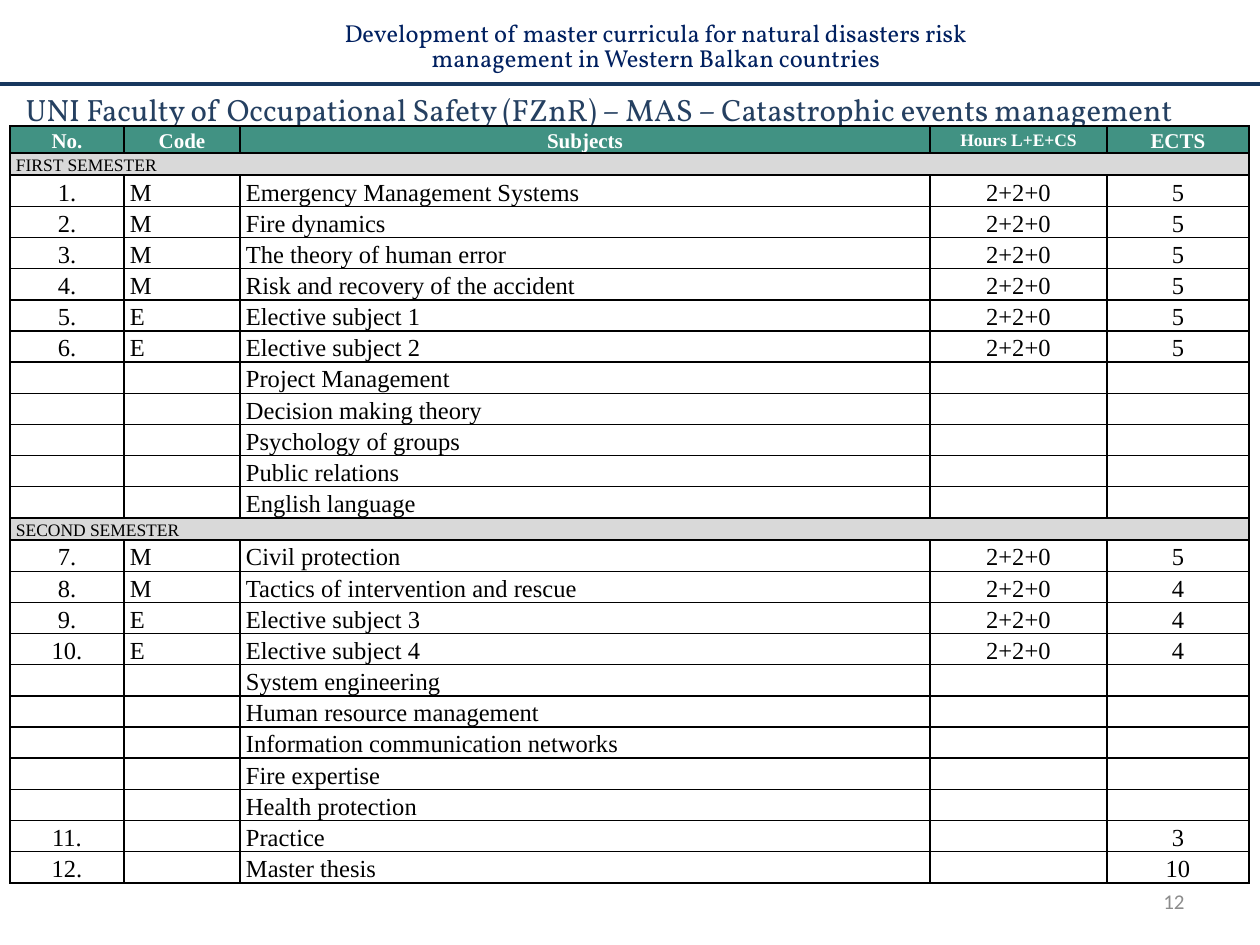
from dataclasses import dataclass

from lxml import etree
from pptx import Presentation
from pptx import util as u
from pptx.dml.color import RGBColor
from pptx.enum import shapes, text
from pptx.oxml import ns

SCALE = 914400 / 126
CENTER = text.PP_ALIGN.CENTER
LEFT = text.PP_ALIGN.LEFT
RIGHT = text.PP_ALIGN.RIGHT
MIDDLE = text.MSO_ANCHOR.MIDDLE
TOP = text.MSO_ANCHOR.TOP


@dataclass(frozen=True)
class Theme:
    heading_font: str = "Vollkorn"
    table_font: str = "Times New Roman"
    number_font: str = "Calibri"
    project: str = "002060"
    rule: str = "17375E"
    programme: str = "254061"
    header: str = "419283"
    semester: str = "D9D9D9"
    ink: str = "000000"
    paper: str = "FFFFFF"
    number: str = "8C8C8C"
    programme_size: float = 17.6
    body_size: int = 14
    header_size: int = 12
    small_size: int = 10


THEME = Theme()
COLUMNS = (114, 116, 690, 177, 142)
ALIGNMENTS = (CENTER, LEFT, LEFT, CENTER, CENTER)
SPACES_AFTER = (0, 0, 0, 3, 3)
HEADINGS = ("No.", "Code", "Subjects", "Hours L+E+CS", "ECTS")
HOURS = "2+2+0"


def electives(*names):
    return [("", "", name, "", "") for name in names]


SEMESTERS = {
    "FIRST SEMESTER": [
        ("1.", "M", "Emergency Management Systems", HOURS, "5"),
        ("2.", "M", "Fire dynamics", HOURS, "5"),
        ("3.", "M", "The theory of human error", HOURS, "5"),
        ("4.", "M", "Risk and recovery of the accident", HOURS, "5"),
        ("5.", "E", "Elective subject 1", HOURS, "5"),
        ("6.", "E", "Elective subject 2", HOURS, "5"),
        *electives("Project Management", "Decision making theory",
                   "Psychology of groups", "Public relations", "English language"),
    ],
    "SECOND SEMESTER": [
        ("7.", "M", "Civil protection", HOURS, "5"),
        ("8.", "M", "Tactics of intervention and rescue", HOURS, "4"),
        ("9.", "E", "Elective subject 3", HOURS, "4"),
        ("10.", "E", "Elective subject 4", HOURS, "4"),
        *electives("System engineering", "Human resource management",
                   "Information communication networks", "Fire expertise",
                   "Health protection"),
        ("11.", "", "Practice", "", "3"),
        ("12.", "", "Master thesis", "", "10"),
    ],
}


def px(length):
    return u.Emu(round(length * SCALE))


def place(shape, box):
    shape.left, shape.top, shape.width, shape.height = map(px, box)


def write(frame, content, *, font, size, color, align=LEFT, bold=False,
          line_spacing=1.0, space_after=0):
    paragraph = frame.paragraphs[0]
    paragraph.alignment = align
    paragraph.line_spacing = line_spacing
    paragraph.space_before = u.Pt(0)
    paragraph.space_after = u.Pt(space_after)
    if not content:
        end = etree.SubElement(paragraph._p, ns.qn("a:endParaRPr"))
        end.set("sz", str(round(size * 100)))
        return
    run = paragraph.add_run()
    run.text = content
    run.font.name = font
    run.font.size = u.Pt(size)
    run.font.bold = bold
    run.font.color.rgb = RGBColor.from_string(color)


def set_frame(shape, anchor):
    frame = shape.text_frame
    frame.word_wrap = True
    frame.auto_size = text.MSO_AUTO_SIZE.NONE
    frame.vertical_anchor = anchor
    return frame


def add_header(slide, box):
    left, top, width, height = box
    title = slide.shapes.title
    place(title, (left + 273, top + 21, 766, 53))
    write(set_frame(title, MIDDLE),
          "Development of master curricula for natural disasters risk "
          "management in Western Balkan countries",
          font=THEME.heading_font, size=THEME.body_size, color=THEME.project,
          align=CENTER, line_spacing=0.85)
    bottom = px(top + height)
    rule = slide.shapes.add_connector(shapes.MSO_CONNECTOR.STRAIGHT, px(left), bottom,
                                      px(left + width), bottom)
    rule.line.color.rgb = RGBColor.from_string(THEME.rule)
    rule.line.width = u.Pt(2)
    etree.SubElement(rule._element.spPr, ns.qn("a:effectLst"))


def add_programme(slide, box):
    body = slide.placeholders[1]
    place(body, box)
    frame = set_frame(body, TOP)
    properties = frame.paragraphs[0]._p.get_or_add_pPr()
    properties.set("marL", "0")
    properties.set("indent", "0")
    etree.SubElement(properties, ns.qn("a:buNone"))
    write(frame,
          "UNI Faculty of Occupational Safety (FZnR) – MAS – Catastrophic events management",
          font=THEME.heading_font, size=THEME.programme_size, color=THEME.programme)


def set_borders(cell):
    properties = cell._tc.get_or_add_tcPr()
    for side in ("lnL", "lnR", "lnT", "lnB"):
        line = etree.SubElement(properties, ns.qn(f"a:{side}"), w=str(u.Pt(1)))
        fill = etree.SubElement(line, ns.qn("a:solidFill"))
        etree.SubElement(fill, ns.qn("a:srgbClr"), val=THEME.ink)


def fill_cell(cell, content, *, fill=None, anchor=TOP, size=THEME.body_size,
              color=THEME.ink, **format):
    set_borders(cell)
    if fill:
        cell.fill.solid()
        cell.fill.fore_color.rgb = RGBColor.from_string(fill)
    else:
        cell.fill.background()
    cell.margin_left = cell.margin_right = px(6)
    cell.margin_top = cell.margin_bottom = 0
    cell.vertical_anchor = anchor
    write(cell.text_frame, content, font=THEME.table_font, size=size, color=color,
          line_spacing=1.15, **format)


def add_header_row(table):
    table.rows[0].height = px(27)
    for cell, heading in zip(table.rows[0].cells, HEADINGS):
        size = THEME.small_size if heading.startswith("Hours") else THEME.header_size
        fill_cell(cell, heading, fill=THEME.header, anchor=MIDDLE, size=size,
                  color=THEME.paper, align=CENTER, bold=True, space_after=3)


def add_semester_row(table, index, name):
    table.rows[index].height = px(22)
    cells = list(table.rows[index].cells)
    for cell, content in zip(cells, (name, "", "", "", "")):
        fill_cell(cell, content, fill=THEME.semester, size=THEME.small_size,
                  space_after=3)
    cells[0].merge(cells[-1])


def add_subject_row(table, index, subject):
    table.rows[index].height = px(31)
    for cell, content, align, after in zip(table.rows[index].cells, subject,
                                           ALIGNMENTS, SPACES_AFTER):
        fill_cell(cell, content, align=align, space_after=after)


def add_curriculum(slide, box):
    count = 1 + sum(1 + len(subjects) for subjects in SEMESTERS.values())
    frame = slide.shapes.add_table(count, len(COLUMNS), *map(px, box))
    table = frame.table
    table.first_row = table.horz_banding = False
    for column, width in zip(table.columns, COLUMNS):
        column.width = px(width)
    add_header_row(table)
    index = 1
    for name, subjects in SEMESTERS.items():
        add_semester_row(table, index, name)
        for index, subject in enumerate(subjects, index + 1):
            add_subject_row(table, index, subject)
        index += 1


def add_page_number(slide, box):
    number = slide.shapes.add_textbox(*map(px, box))
    write(set_frame(number, MIDDLE), "12", font=THEME.number_font,
          size=THEME.header_size, color=THEME.number, align=RIGHT)


def main():
    presentation = Presentation()
    presentation.slide_width, presentation.slide_height = px(1260), px(945)
    slide = presentation.slides.add_slide(presentation.slide_layouts[1])
    add_page_number(slide, (903, 876, 294, 50))
    add_header(slide, (0, 0, 1260, 84))
    add_programme(slide, (13, 84, 1247, 45))
    add_curriculum(slide, (10, 126, sum(COLUMNS), 756))
    presentation.save("out.pptx")


if __name__ == "__main__":
    main()
